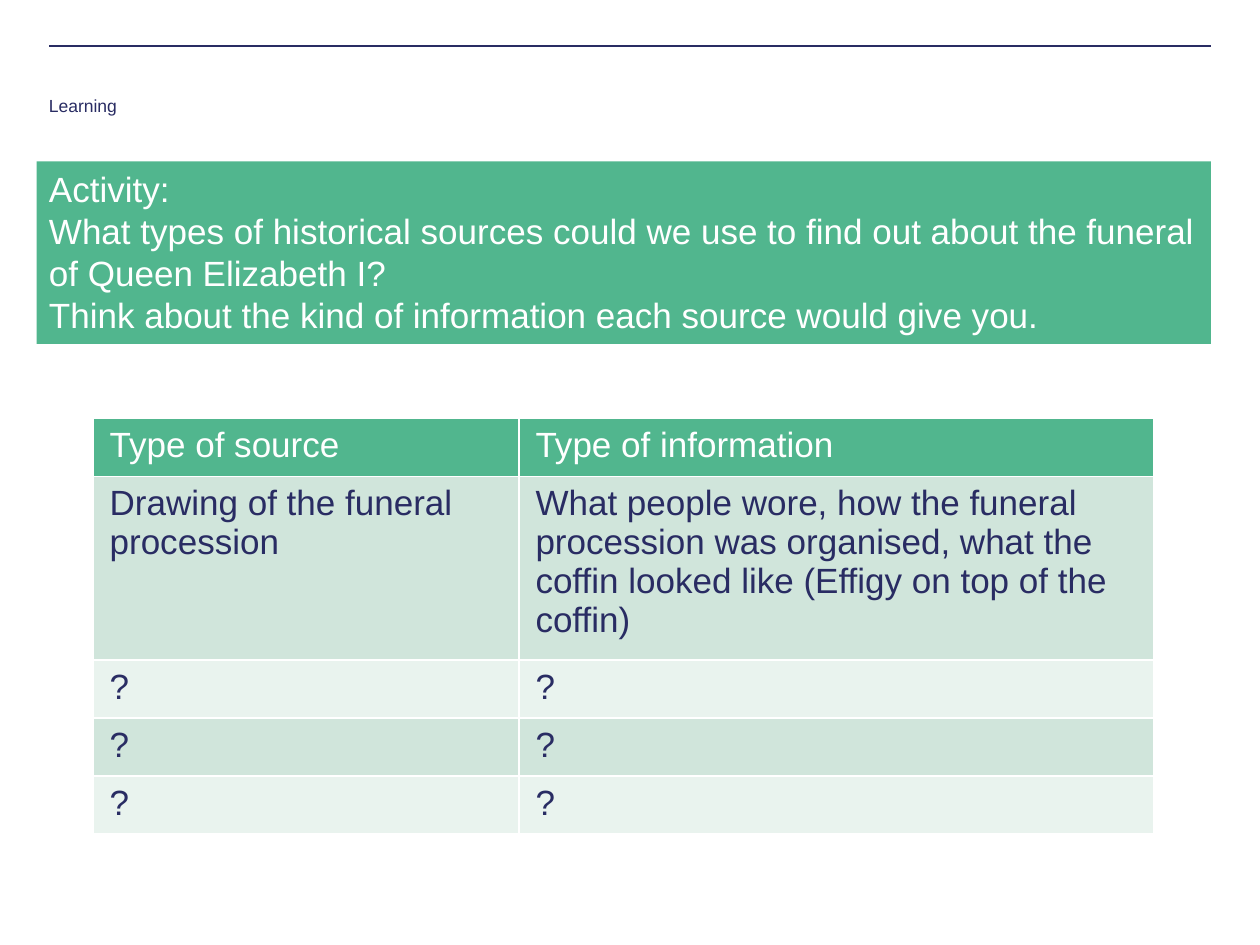
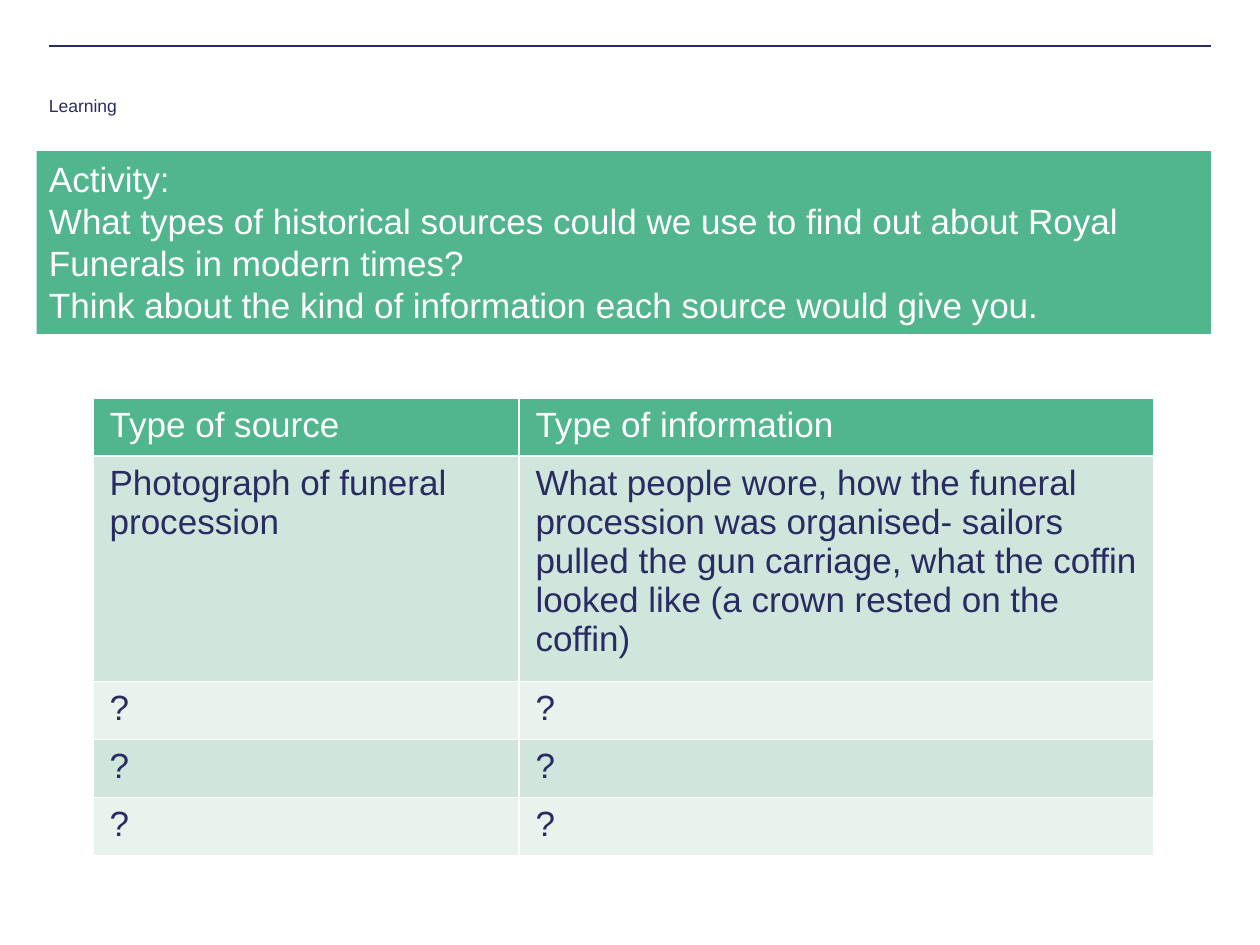
from pptx import Presentation
from pptx.dml.color import RGBColor
from pptx.enum.shapes import MSO_CONNECTOR as Connector, MSO_SHAPE as Shape
from pptx.enum.text import MSO_ANCHOR as Anchor, PP_ALIGN as Align
from pptx.oxml import parse_xml
from pptx.oxml.ns import nsdecls
from pptx.util import Inches, Pt

NAVY, GREEN, WHITE = "292C63", "51B68E", "FFFFFF"
BANDS = ("D0E5DB", "E9F3EE")
FONT = "Arial"

# Square grid of 100 columns by 75 rows
COLUMNS, ROWS = 100, 75
EDGE, BOX_LEFT = 3.9, 2.9
BANNER_HEIGHT = 14.5
TABLE_LEFT, TABLE_COLUMNS = 7.4, (33.8, 50.4)
ROW_HEIGHT, UNKNOWN_ROWS = 4.6, 3

ACTIVITIES = [
    {
        "topic": "the funeral of Queen Elizabeth I",
        "banner_top": 12.8,
        "table_top": 33.2,
        "example_height": 14.6,
        "example": ("Drawing of the funeral procession",
                    "What people wore, how the funeral procession was organised, "
                    "what the coffin looked like (Effigy on top of the coffin)"),
    },
    {
        "topic": "Royal Funerals in modern times",
        "banner_top": 12,
        "table_top": 31.6,
        "example_height": 17.9,
        "example": ("Photograph of funeral procession",
                    "What people wore, how the funeral procession was organised- "
                    "sailors pulled the gun carriage, what the coffin looked like "
                    "(a crown rested on the coffin)"),
    },
]


def grid(units):
    return Inches(units / 10)


def color(hex_string):
    return RGBColor.from_string(hex_string)


def paint(target, hex_string):
    target.fill.solid()
    target.fill.fore_color.rgb = color(hex_string)


def write(text_frame, lines, size, hex_string, spacing=None):
    text_frame.text = "\n".join(lines)
    text_frame.word_wrap = True
    for paragraph in text_frame.paragraphs:
        paragraph.alignment = Align.LEFT
        paragraph.line_spacing = spacing
        for run in paragraph.runs:
            run.font.size, run.font.name = Pt(size), FONT
            run.font.color.rgb = color(hex_string)


def add_header(slide):
    # Rule across the top
    rule = slide.shapes.add_connector(
        Connector.STRAIGHT, grid(EDGE), grid(3.65), grid(COLUMNS - EDGE), grid(3.65))
    rule.line.color.rgb = color(NAVY)
    rule.line.width = Pt(1)
    rule._element.spPr.append(parse_xml(f"<a:effectLst {nsdecls('a')}/>"))

    # Department
    department = slide.shapes.add_textbox(grid(BOX_LEFT), grid(7.05), grid(66.1), grid(1.8))
    write(department.text_frame, ["Learning"], 10, NAVY)


def add_banner(slide, top, topic):
    banner = slide.shapes.add_shape(
        Shape.RECTANGLE, grid(BOX_LEFT), grid(top),
        grid(COLUMNS - EDGE - BOX_LEFT), grid(BANNER_HEIGHT))
    banner.shadow.inherit = False
    paint(banner, GREEN)
    banner.line.fill.background()
    banner.text_frame.vertical_anchor = Anchor.TOP
    write(banner.text_frame, [
        "Activity:",
        f"What types of historical sources could we use to find out about {topic}?",
        "Think about the kind of information each source would give you.",
    ], 20, WHITE, spacing=Pt(24))


def add_borders(cell):
    properties = cell._tc.get_or_add_tcPr()
    for position, side in enumerate("LRTB"):
        properties.insert(position, parse_xml(
            f'<a:ln{side} {nsdecls("a")} w="{Pt(1)}"><a:solidFill>'
            f'<a:srgbClr val="{WHITE}"/></a:solidFill></a:ln{side}>'))


def add_source_table(slide, top, example, example_height):
    rows = [("Type of source", "Type of information"), example]
    rows += [("?", "?")] * UNKNOWN_ROWS
    heights = [ROW_HEIGHT, example_height] + [ROW_HEIGHT] * UNKNOWN_ROWS
    table = slide.shapes.add_table(
        len(rows), len(TABLE_COLUMNS), grid(TABLE_LEFT), grid(top),
        grid(sum(TABLE_COLUMNS)), grid(sum(heights))).table
    for column, width in zip(table.columns, TABLE_COLUMNS):
        column.width = grid(width)

    for row_number, (texts, height) in enumerate(zip(rows, heights)):
        is_heading = row_number == 0
        table.rows[row_number].height = grid(height)
        for cell, text in zip(table.rows[row_number].cells, texts):
            cell.margin_left, cell.margin_right = grid(1.3), grid(1)
            cell.margin_top = cell.margin_bottom = grid(0.6)
            paint(cell, GREEN if is_heading else BANDS[(row_number - 1) % 2])
            add_borders(cell)
            write(cell.text_frame, [text], 20, WHITE if is_heading else NAVY,
                  spacing=Pt(22.3))


def add_activity_slide(presentation, activity):
    slide = presentation.slides.add_slide(presentation.slide_layouts[6])
    add_header(slide)
    add_banner(slide, activity["banner_top"], activity["topic"])
    add_source_table(slide, activity["table_top"], activity["example"],
                     activity["example_height"])


def main():
    presentation = Presentation()
    presentation.slide_width, presentation.slide_height = grid(COLUMNS), grid(ROWS)
    for activity in ACTIVITIES:
        add_activity_slide(presentation, activity)
    presentation.save("out.pptx")


if __name__ == "__main__":
    main()
